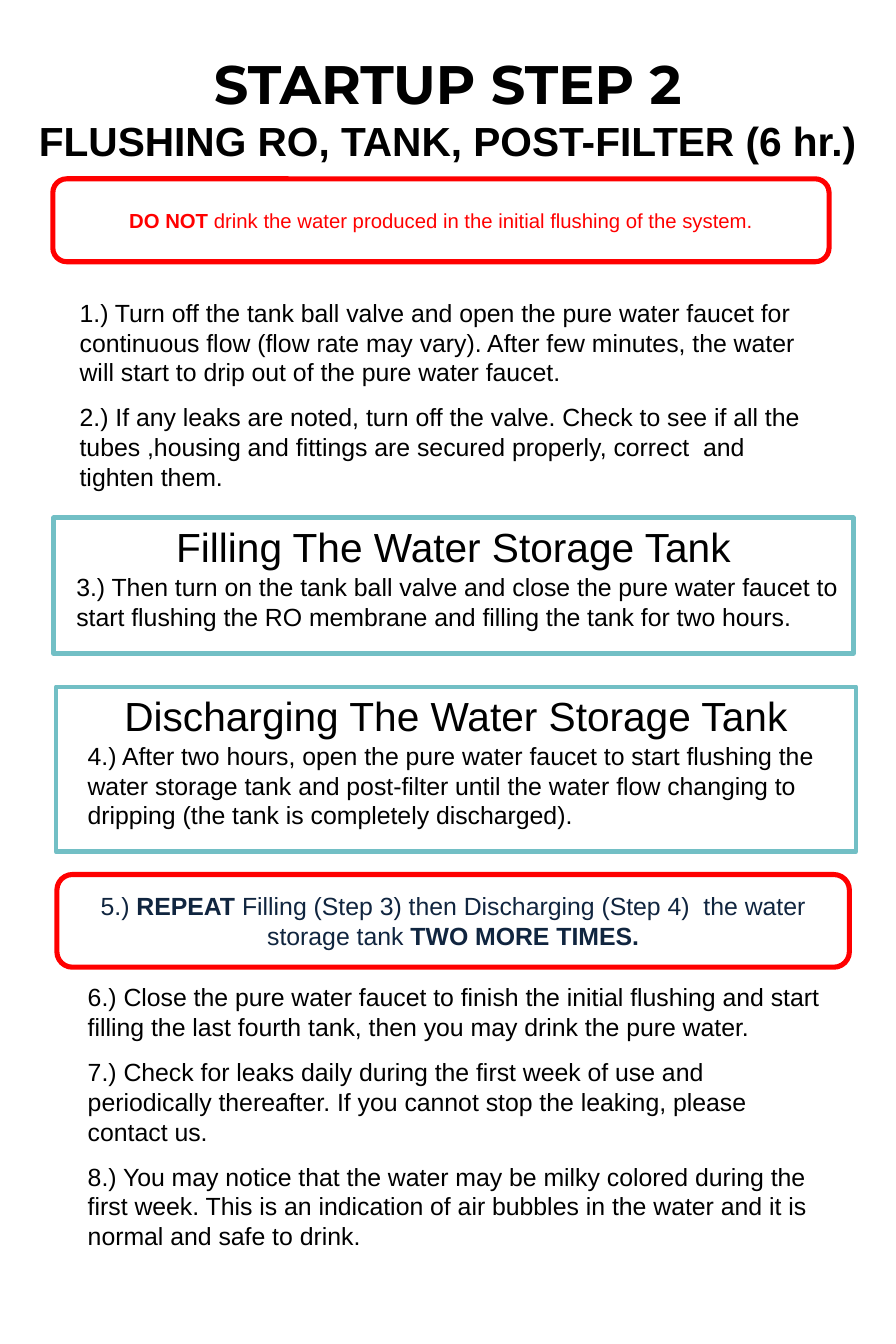
import pptx
import pptx.util
import pptx.dml.color
import pptx.enum.shapes
import pptx.enum.text

COLORS = {"black": "000000", "red": "FF0000", "teal": "72BFC5", "navy": "10253F"}

TITLE = [
    ("STARTUP STEP 2", 48, "Montserrat"),
    ("FLUSHING RO, TANK, POST-FILTER (6 hr.)", 36, "Arial"),
]
STEPS = [
    ((0.83, 3.58, 9.37, 2.16), [
        "1.) Turn off the tank ball valve and open the pure water faucet for continuous flow (flow rate may vary). After few minutes, the water will start to drip out of the pure water faucet.",
        "2.) If any leaks are noted, turn off the valve. Check to see if all the tubes ,housing and fittings are secured properly, correct  and tighten them.",
    ]),
    ((0.93, 12, 9.37, 3.01), [
        "6.) Close the pure water faucet to finish the initial flushing and start filling the last fourth tank, then you may drink the pure water.",
        "7.) Check for leaks daily during the first week of use and periodically thereafter. If you cannot stop the leaking, please contact us.",
        "8.) You may notice that the water may be milky colored during the first week. This is an indication of air bubbles in the water and it is normal and safe to drink.",
    ]),
]
PANELS = [
    ((0.66, 6.37, 9.84, 1.67), "Filling The Water Storage Tank", (0.84, 6.99, 9.59, 0.84),
     "3.) Then turn on the tank ball valve and close the pure water faucet to start flushing the RO membrane and filling the tank for two hours."),
    ((0.69, 8.45, 9.84, 2.03), "Discharging The Water Storage Tank", (0.98, 9.06, 9.34, 1.21),
     "4.) After two hours, open the pure water faucet to start flushing the water storage tank and post-filter until the water flow changing to dripping (the tank is completely discharged)."),
]
WARNINGS = [
    ((0.65, 2.2, 9.55, 1.02), 18, "red", [
        ("DO NOT ", True),
        ("drink the water produced in the initial flushing of the system.", False),
    ]),
    ((0.7, 10.76, 9.75, 1.14), 22, "navy", [
        ("5.) ", False),
        ("REPEAT ", True),
        ("Filling (Step 3) then Discharging (Step 4)  the water storage tank ", False),
        ("TWO MORE TIMES.", True),
    ]),
]

Inches, Pt = pptx.util.Inches, pptx.util.Pt
SHAPE = pptx.enum.shapes.MSO_SHAPE
CENTER = pptx.enum.text.PP_ALIGN.CENTER
LEFT = pptx.enum.text.PP_ALIGN.LEFT
MIDDLE = pptx.enum.text.MSO_ANCHOR.MIDDLE


def rgb(name):
    return pptx.dml.color.RGBColor.from_string(COLORS[name])


def add_box(shapes, box, kind, color, width):
    s = shapes.add_shape(kind, *map(Inches, box))
    s.shadow.inherit = False
    s.fill.background()
    s.line.color.rgb = rgb(color)
    s.line.width = Pt(width)
    return s


def frame(s, wide=True):
    tf = s.text_frame
    tf.word_wrap = True
    tf.margin_left = tf.margin_right = Inches(0.15 if wide else 0.1)
    tf.margin_top = tf.margin_bottom = Inches(0.08 if wide else 0.05)
    return tf


def write(tf, paragraphs, align=LEFT, before=0, after=0):
    for i, runs in enumerate(paragraphs):
        p = tf.add_paragraph() if i else tf.paragraphs[0]
        p.alignment = align
        p.space_before, p.space_after = Pt(before), Pt(after)
        for text, size, font, color, bold in runs:
            r = p.add_run()
            r.text = text
            r.font.size, r.font.name, r.font.bold = Pt(size), font, bold
            r.font.color.rgb = rgb(color)


def add_text(shapes, box, wide=True):
    return frame(shapes.add_textbox(*map(Inches, box)), wide)


def step(text):
    return [(text, 22, "Arial", "black", False)]


def main():
    prs = pptx.Presentation()
    prs.slide_width, prs.slide_height = pptx.util.Cm(28), pptx.util.Cm(42)
    shapes = prs.slides.add_slide(prs.slide_layouts[6]).shapes

    tf = add_text(shapes, (0, 0.5, 11.02, 1.65))
    tf.vertical_anchor = MIDDLE
    write(tf, [[(text, size, font, "black", True)] for text, size, font in TITLE], CENTER, after=0.9)

    for box, texts in STEPS:
        write(add_text(shapes, box), [step(text) for text in texts], before=13.5)

    for box, heading, step_box, text in PANELS:
        group = shapes.add_group_shape().shapes
        add_box(group, box, SHAPE.RECTANGLE, "teal", 4)
        tf = add_text(group, (box[0] + 0.03, box[1], 9.78, 0.71), False)
        write(tf, [[(heading, 36, "Arial", "black", False)]], CENTER)
        write(add_text(group, step_box, False), [step(text)], before=13.5)

    for box, size, color, runs in WARNINGS:
        s = add_box(shapes, box, SHAPE.ROUNDED_RECTANGLE, "red", 4.5)
        s.adjustments[0] = 0.167
        tf = frame(s)
        tf.vertical_anchor = MIDDLE
        write(tf, [[(text, size, "Arial", color, bold) for text, bold in runs]], CENTER)

    prs.save("out.pptx")


if __name__ == "__main__":
    main()
